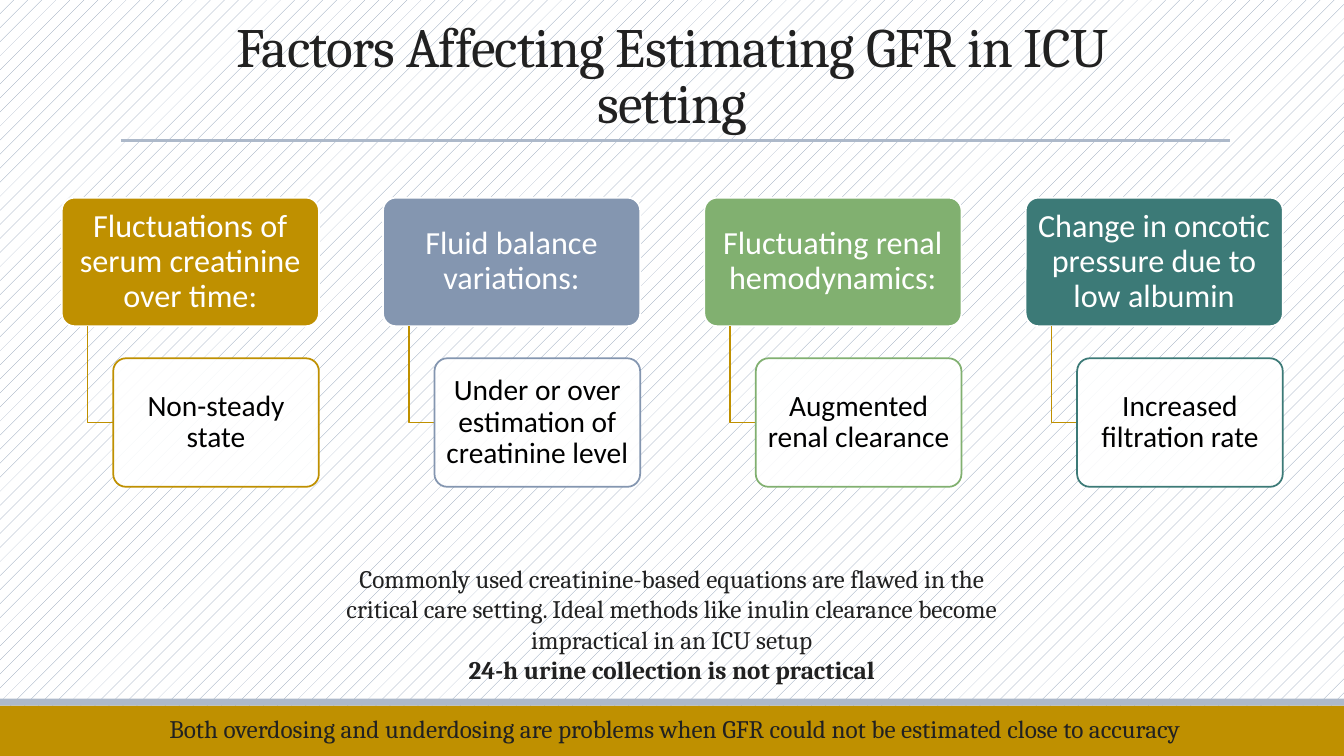
"""Build a slide on the factors that affect GFR estimates in the ICU."""
from lxml import etree
from pptx import Presentation
from pptx import util as u
from pptx.dml.color import RGBColor
from pptx.enum import dml, shapes, text
from pptx.oxml.ns import qn

TITLE = "Factors Affecting Estimating GFR in ICU setting"
FACTORS = [
    ("Fluctuations of serum creatinine over time:", "Non-steady state", "gold"),
    ("Fluid balance variations:", "Under or over estimation of creatinine level", "slate"),
    ("Fluctuating renal hemodynamics:", "Augmented renal clearance", "green"),
    ("Change in oncotic pressure due to low albumin", "Increased filtration rate", "teal"),
]
SUMMARY = [
    ("Commonly used creatinine-based equations are flawed in the critical care setting. "
     "Ideal methods like inulin clearance become impractical in an ICU setup", False),
    ("24-h urine collection is not practical", True),
]
FOOTER = [("Both overdosing and underdosing are problems when GFR could not be "
           "estimated close to accuracy", False)]
COLORS = {"gold": "BF9000", "slate": "8496B0", "green": "81B070", "teal": "3C7A77",
          "pale": "ADB9CA", "ink": "212121", "white": "FFFFFF", "black": "000000"}

SLIDE_W, SLIDE_H = 960, 540
FOOTER_TOP, STRIPE_H = 504, 5
FIRST_LEFT, PITCH = 44.1, 229.5
CARD_W, CARD_H, INDENT = 183.7, 91.8, 36.8
FACTOR_TOP, EFFECT_TOP = 141.2, 255.9


def rgb(name):
    return RGBColor.from_string(COLORS[name])


def write(para, words, size, font, color, bold=False):
    para.alignment = text.PP_ALIGN.CENTER
    span = para.add_run()
    span.text = words
    span.font.size = u.Pt(size)
    span.font.name = font
    span.font.bold = bold
    span.font.color.rgb = rgb(color)
    return span


def add_shape(page, kind, left, top, width, height, fill, line=None):
    shape = page.shapes.add_shape(kind, u.Pt(left), u.Pt(top), u.Pt(width), u.Pt(height))
    shape.shadow.inherit = False
    shape.fill.solid()
    shape.fill.fore_color.rgb = rgb(fill)
    if line:
        shape.line.color.rgb = rgb(line)
        shape.line.width = u.Pt(1.25)
    else:
        shape.line.fill.background()
    return shape


def add_card(page, left, top, width, fill, line, words, size, color):
    card = add_shape(page, shapes.MSO_SHAPE.ROUNDED_RECTANGLE, left, top, width, CARD_H, fill, line)
    card.adjustments[0] = 0.1
    frame = card.text_frame
    frame.word_wrap = True
    frame.vertical_anchor = text.MSO_ANCHOR.MIDDLE
    frame.margin_left = frame.margin_right = u.Pt(3.5)
    frame.margin_top = frame.margin_bottom = u.Pt(2)
    para = frame.paragraphs[0]
    para.line_spacing = 0.9
    write(para, words, size, "Calibri", color)
    return card


def add_elbow(page, left):
    x, top, bottom = left + INDENT / 2, FACTOR_TOP + CARD_H, EFFECT_TOP + CARD_H / 2
    builder = page.shapes.build_freeform(u.Pt(x), u.Pt(top))
    builder.add_line_segments([(u.Pt(x), u.Pt(bottom)), (u.Pt(left + INDENT), u.Pt(bottom))],
                              close=False)
    elbow = builder.convert_to_shape()
    elbow.shadow.inherit = False
    elbow.fill.background()
    elbow.line.color.rgb = rgb("gold")
    elbow.line.width = u.Pt(1.25)


def add_note(page, left, top, width, height, lines):
    box = page.shapes.add_textbox(u.Pt(left), u.Pt(top), u.Pt(width), u.Pt(height))
    frame = box.text_frame
    frame.word_wrap = True
    for index, (words, bold) in enumerate(lines):
        para = frame.add_paragraph() if index else frame.paragraphs[0]
        write(para, words, 18, "Cambria", "ink", bold)


def add_title(page):
    title = page.shapes.title
    title.left, title.top, title.width, title.height = u.Pt(157), u.Pt(22.3), u.Pt(646), u.Pt(77.8)
    frame = title.text_frame
    frame.word_wrap = True
    frame.auto_size = text.MSO_AUTO_SIZE.NONE
    frame.vertical_anchor = text.MSO_ANCHOR.BOTTOM
    para = frame.paragraphs[0]
    para.line_spacing = 0.85
    span = write(para, TITLE, 39.6, "Cambria", "ink")
    span.font._element.set("spc", "-50")


def add_frame(page):
    backdrop = page.background.fill
    backdrop.patterned()
    backdrop.pattern = dml.MSO_PATTERN.PERCENT_5
    backdrop.fore_color.rgb = rgb("slate")
    backdrop.back_color.rgb = rgb("white")
    bar = shapes.MSO_SHAPE.RECTANGLE
    add_shape(page, bar, 0, FOOTER_TOP, SLIDE_W, SLIDE_H - FOOTER_TOP, "gold")
    add_shape(page, bar, 0, FOOTER_TOP - STRIPE_H, SLIDE_W, STRIPE_H, "pale")
    rule = page.shapes.add_connector(shapes.MSO_CONNECTOR.STRAIGHT,
                                     u.Pt(86.4), u.Pt(100.3), u.Pt(878.4), u.Pt(100.3))
    rule.line.color.rgb = rgb("pale")
    rule.line.width = u.Pt(2.25)
    etree.SubElement(rule._element.spPr, qn("a:effectLst"))


def main():
    deck = Presentation()
    deck.slide_width, deck.slide_height = u.Pt(SLIDE_W), u.Pt(SLIDE_H)
    page = deck.slides.add_slide(deck.slide_layouts[5])
    add_frame(page)
    add_title(page)
    for column, (factor, effect, color) in enumerate(FACTORS):
        left = FIRST_LEFT + column * PITCH
        add_card(page, left, FACTOR_TOP, CARD_W, color, "white", factor, 23, "white")
        add_elbow(page, left)
        card = add_card(page, left + INDENT, EFFECT_TOP, CARD_W - INDENT,
                        "white", color, effect, 21, "black")
        tint = card._element.spPr.find(qn("a:solidFill"))[0]
        etree.SubElement(tint, qn("a:alpha"), val="90000")
    add_note(page, 79.2, 506.2, 805.7, 29, FOOTER)
    add_note(page, 239.8, 398.9, 480.2, 94.3, SUMMARY)
    deck.save("out.pptx")


if __name__ == "__main__":
    main()
